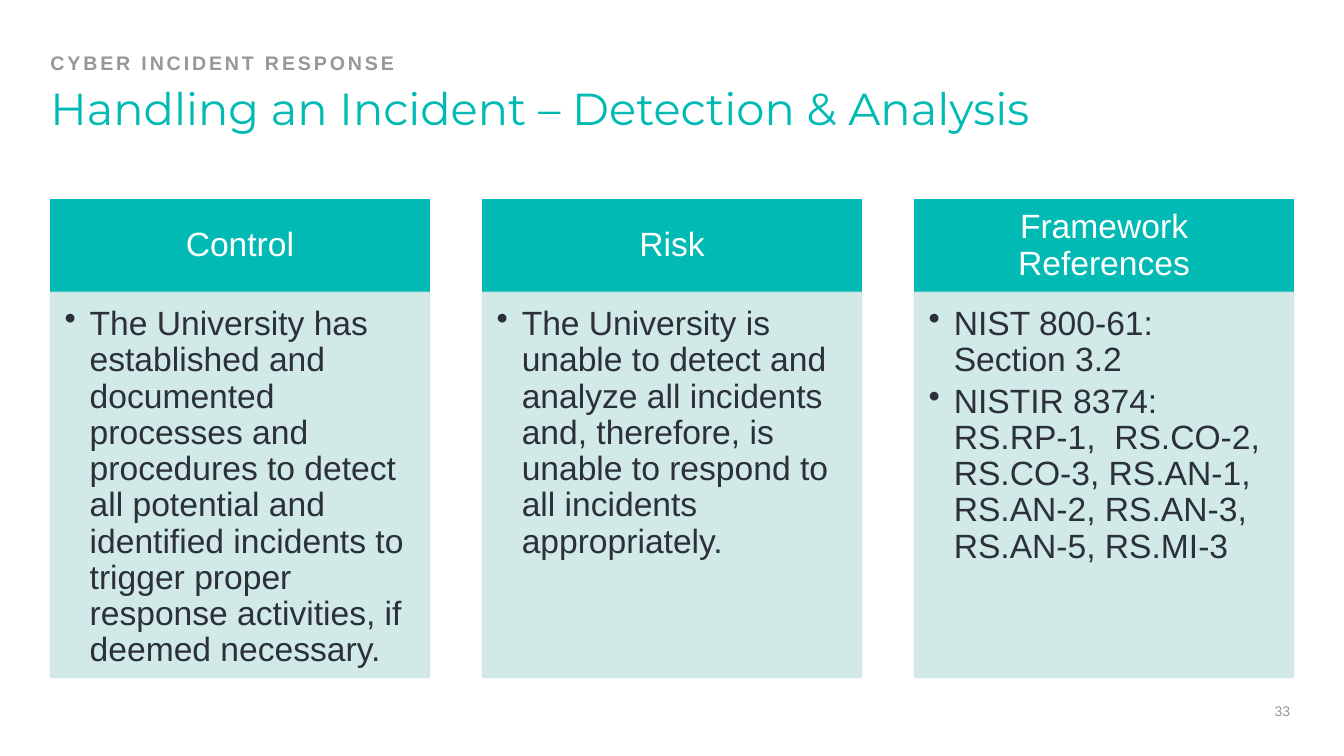
from lxml import etree
from pptx import Presentation
from pptx.dml.color import RGBColor
from pptx.enum import shapes, text
from pptx.oxml import ns
from pptx.util import Inches, Pt

EYEBROW = "CYBER INCIDENT RESPONSE"
TITLE = "Handling an Incident – Detection & Analysis"
PAGE = "33"
COLUMNS = [
    ("Control", [
        "The University has established and documented processes and procedures "
        "to detect all potential and identified incidents to trigger proper "
        "response activities, if deemed necessary."]),
    ("Risk", [
        "The University is unable to detect and analyze all incidents and, "
        "therefore, is unable to respond to all incidents appropriately."]),
    ("Framework References", [
        "NIST 800-61: Section 3.2",
        "NISTIR 8374: RS.RP-1,  RS.CO-2, RS.CO-3, RS.AN-1, RS.AN-2, RS.AN-3, "
        "RS.AN-5, RS.MI-3"]),
]
COLORS = {"teal": "00BAB3", "mint": "CCE7E5", "ink": "2B303A",
          "gray": "979797", "white": "FFFFFF"}
LEFT, WIDTH, COL_W = 0.5, 12.33, 3.76
HEAD_TOP, HEAD_H, BODY_H = 1.98, 0.92, 3.82
PITCH = (WIDTH - COL_W) / (len(COLUMNS) - 1)


def rgb(name):
    return RGBColor.from_string(COLORS[name])


def write(sp, lines, size, color, font="Arial", bold=False, align="LEFT",
          anchor="TOP", insets=(0, 0, 0, 0), spacing=0.9, bullet=False):
    tf = sp.text_frame
    tf.word_wrap = True
    tf.vertical_anchor = getattr(text.MSO_ANCHOR, anchor)
    tf.margin_left, tf.margin_top, tf.margin_right, tf.margin_bottom = map(Inches, insets)
    tf.text = "\n".join(lines)
    for p in tf.paragraphs:
        p.alignment = getattr(text.PP_ALIGN, align)
        p.line_spacing = spacing
        if bullet:
            p.space_after = Pt(3.6)
            pPr = p._p.get_or_add_pPr()
            pPr.set("marL", str(Inches(0.25)))
            pPr.set("indent", str(-Inches(0.25)))
            etree.SubElement(pPr, ns.qn("a:buChar")).set("char", "•")
        for r in p.runs:
            r.font.name, r.font.size, r.font.bold = font, Pt(size), bold
            r.font.color.rgb = rgb(color)
    return tf


def add_label(s, box, lines, size, color, **style):
    sp = s.shapes.add_textbox(*map(Inches, box))
    return write(sp, lines, size, color, **style)


def add_panel(s, box, color, alpha=100):
    sp = s.shapes.add_shape(shapes.MSO_SHAPE.RECTANGLE, *map(Inches, box))
    sp.shadow.inherit = False
    sp.fill.solid()
    sp.fill.fore_color.rgb = rgb(color)
    sp.line.color.rgb = rgb(color)
    sp.line.width = Pt(1)
    if alpha < 100:
        for clr in sp._element.spPr.iter(ns.qn("a:srgbClr")):
            etree.SubElement(clr, ns.qn("a:alpha")).set("val", str(alpha * 1000))
    return sp


def main():
    prs = Presentation()
    prs.slide_width, prs.slide_height = Inches(13.33), Inches(7.5)
    s = prs.slides.add_slide(prs.slide_layouts[6])

    tf = add_label(s, (LEFT, 0.53, WIDTH, 0.21), [EYEBROW], 14, "gray",
                   bold=True, anchor="BOTTOM")
    tf.paragraphs[0].runs[0].font._element.set("spc", "200")
    add_label(s, (LEFT, 0.76, WIDTH, 0.59), [TITLE], 32, "teal",
              font="Montserrat", insets=(0, 0.1, 0, 0))

    for i, (heading, points) in enumerate(COLUMNS):
        x = LEFT + i * PITCH
        head = add_panel(s, (x, HEAD_TOP, COL_W, HEAD_H), "teal")
        write(head, [heading], 24, "white", align="CENTER", anchor="MIDDLE",
              insets=(0.19, 0.11, 0.19, 0.11))
        body = add_panel(s, (x, HEAD_TOP + HEAD_H, COL_W, BODY_H), "mint", 90)
        write(body, points, 24, "ink", insets=(0.14, 0.14, 0.19, 0.21), bullet=True)

    add_label(s, (12.52, 6.97, 0.4, 0.17), [PAGE], 10, "gray",
              align="CENTER", anchor="MIDDLE", spacing=1.0)
    prs.save("out.pptx")


if __name__ == "__main__":
    main()
